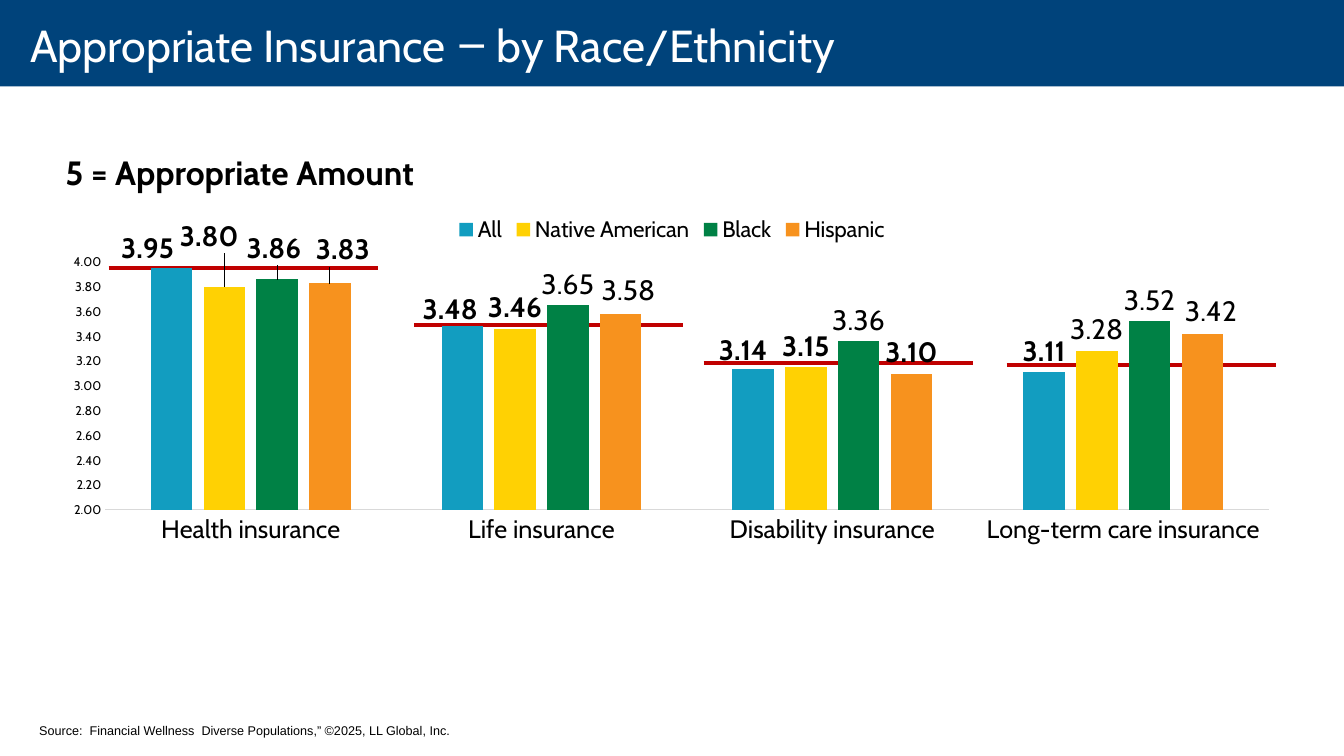
from lxml import etree
from pptx import Presentation
from pptx.chart.data import CategoryChartData
from pptx.dml.color import RGBColor
from pptx.enum.chart import XL_CHART_TYPE, XL_LABEL_POSITION, XL_LEGEND_POSITION, XL_TICK_MARK
from pptx.enum.shapes import MSO_CONNECTOR, MSO_SHAPE
from pptx.enum.text import MSO_ANCHOR
from pptx.oxml import parse_xml
from pptx.oxml.ns import nsdecls, qn
from pptx.util import Cm, Pt

WIDTH, HEIGHT = 33.87, 19.05
CHART_W, CHART_H = 31.39, 8.74
CATEGORIES = ["Health insurance", "Life insurance", "Disability insurance",
              "Long-term care insurance"]
SERIES = [
    ("All", "129DC0", (3.95, 3.48, 3.14, 3.11)),
    ("Native American", "FFD103", (3.80, 3.46, 3.15, 3.28)),
    ("Black", "008145", (3.86, 3.65, 3.36, 3.52)),
    ("Hispanic", "F7921E", (3.83, 3.58, 3.10, 3.42)),
]
# Series -> categories whose value label is not bold
REGULAR_LABELS = {1: (3,), 2: (1, 2, 3), 3: (1, 3)}
# (series, category) -> label shift in cm, right and down
LABEL_SHIFTS = {
    (0, 0): (-0.6, 0.03), (0, 1): (-0.3, 0.1), (0, 2): (-0.25, 0.08),
    (1, 0): (-0.38, -0.73), (2, 0): (-0.08, -0.25), (3, 0): (0.33, -0.3),
    (3, 1): (0.2, -0.05), (3, 3): (0.22, -0.03),
}
AVERAGE_LINES = [(2.74, 6.76), (10.44, 8.18), (17.73, 9.14), (25.37, 9.19)]
LINE_LENGTH = 6.78


def rgb(color):
    return RGBColor.from_string(color)


def set_font(font, size, color="000000", name="Cabin", bold=False):
    font.size, font.name, font.bold = Pt(size), name, bold
    font.color.rgb = rgb(color)


def add_banner(s):
    sp = s.shapes.add_shape(MSO_SHAPE.RECTANGLE, 0, 0, Cm(WIDTH), Cm(2.18))
    sp.shadow.inherit = False
    sp.fill.solid()
    sp.fill.fore_color.rgb = rgb("00437B")
    sp.line.fill.background()


def add_text(s, box, runs, size, color="000000", bold=False, left_inset=0.25):
    """Add a one-line text box; runs is a list of (text, font name)."""
    tf = s.shapes.add_textbox(*(Cm(v) for v in box)).text_frame
    tf.word_wrap = True
    tf.vertical_anchor = MSO_ANCHOR.MIDDLE
    tf.margin_left = Cm(left_inset)
    for text, name in runs:
        r = tf.paragraphs[0].add_run()
        r.text = text
        set_font(r.font, size, color, name, bold)


def add_average_line(s, x, y):
    line = s.shapes.add_connector(MSO_CONNECTOR.STRAIGHT, Cm(x), Cm(y),
                                  Cm(x + LINE_LENGTH), Cm(y))
    line.line.color.rgb = rgb("C00000")
    line.line.width = Pt(3)
    etree.SubElement(line._element.spPr, qn("a:effectLst"))


def layout_xml(x, y, w=None, h=None):
    """Manual layout: an inner plot area if a size is given, else a label shift."""
    parts = f'<c:x val="{x:.4f}"/><c:y val="{y:.4f}"/>'
    if w:
        parts = ('<c:layoutTarget val="inner"/><c:xMode val="edge"/><c:yMode val="edge"/>'
                 f'{parts}<c:w val="{w}"/><c:h val="{h}"/>')
    return parse_xml(f'<c:layout {nsdecls("c")}><c:manualLayout>{parts}'
                     '</c:manualLayout></c:layout>')


def format_axes(chart):
    cat, val = chart.category_axis, chart.value_axis
    for axis, size in ((cat, 18), (val, 9)):
        axis.major_tick_mark = axis.minor_tick_mark = XL_TICK_MARK.NONE
        axis.has_major_gridlines = False
        set_font(axis.tick_labels.font, size)
    cat.format.line.color.rgb = rgb("D9D9D9")
    cat.format.line.width = Pt(0.75)
    val.format.line.fill.background()
    val.minimum_scale, val.maximum_scale, val.major_unit = 2, 4, 0.2
    val.tick_labels.number_format = "0.00"
    val.tick_labels.number_format_is_linked = False


def format_labels(series, index):
    labels = series.data_labels
    labels.show_value = True
    labels.position = XL_LABEL_POSITION.OUTSIDE_END
    labels.number_format = "0.00"
    labels.number_format_is_linked = False
    set_font(labels.font, 20, bold=True)
    for c in range(len(CATEGORIES)):
        regular = c in REGULAR_LABELS.get(index, ())
        shift = LABEL_SHIFTS.get((index, c))
        if not (regular or shift):
            continue
        label = series.points[c].data_label
        set_font(label.font, 20, bold=not regular)
        label.position = XL_LABEL_POSITION.OUTSIDE_END
        if shift:
            idx = labels._element.xpath(f'c:dLbl/c:idx[@val="{c}"]')[0]
            idx.addnext(layout_xml(shift[0] / CHART_W, shift[1] / CHART_H))


def add_rating_chart(s):
    data = CategoryChartData(number_format="0.00")
    data.categories = CATEGORIES
    for name, _, values in SERIES:
        data.add_series(name, values)
    chart = s.shapes.add_chart(XL_CHART_TYPE.COLUMN_CLUSTERED, Cm(1.24), Cm(5.16),
                               Cm(CHART_W), Cm(CHART_H), data).chart
    set_font(chart.font, 10, name="Arial")
    chart.has_title = False
    chart.has_legend = True
    chart.legend.position = XL_LEGEND_POSITION.TOP
    chart.legend.include_in_layout = False
    set_font(chart.legend.font, 16)
    format_axes(chart)

    plot = chart.plots[0]
    plot.gap_width, plot.overlap, plot.vary_by_categories = 219, -27, False
    for i, (series, (_, color, _)) in enumerate(zip(plot.series, SERIES)):
        series.format.fill.solid()
        series.format.fill.fore_color.rgb = rgb(color)
        format_labels(series, i)

    root = chart._chartSpace
    area = root.chart.plotArea
    for old in area.findall(qn("c:layout")):
        area.remove(old)
    area.insert(0, layout_xml(0.045, 0.165, 0.934, 0.715))
    root.chart.addnext(parse_xml(
        f'<c:spPr {nsdecls("c", "a")}><a:noFill/><a:ln><a:noFill/></a:ln></c:spPr>'))


def main():
    prs = Presentation()
    prs.slide_width, prs.slide_height = Cm(WIDTH), Cm(HEIGHT)
    s = prs.slides.add_slide(prs.slide_layouts[6])
    add_banner(s)
    for x, y in AVERAGE_LINES:
        add_average_line(s, x, y)
    add_rating_chart(s)
    add_text(s, (0, -0.1, WIDTH, 2.46),
             [("Appropriate Insurance ", "Cabin"), ("— ", "Roboto Condensed"),
              ("by Race/Ethnicity", "Cabin")], 32, "FFFFFF", left_inset=0.76)
    add_text(s, (1.4, 3.71, 9.65, 1.27), [("5 = Appropriate Amount", "Cabin")], 24, bold=True)
    add_text(s, (0.74, 18.08, 13.18, 0.64),
             [("Source:  Financial Wellness  Diverse Populations,” ©2025, LL Global, Inc.",
               "Arial")], 9)
    prs.save("out.pptx")


if __name__ == "__main__":
    main()
